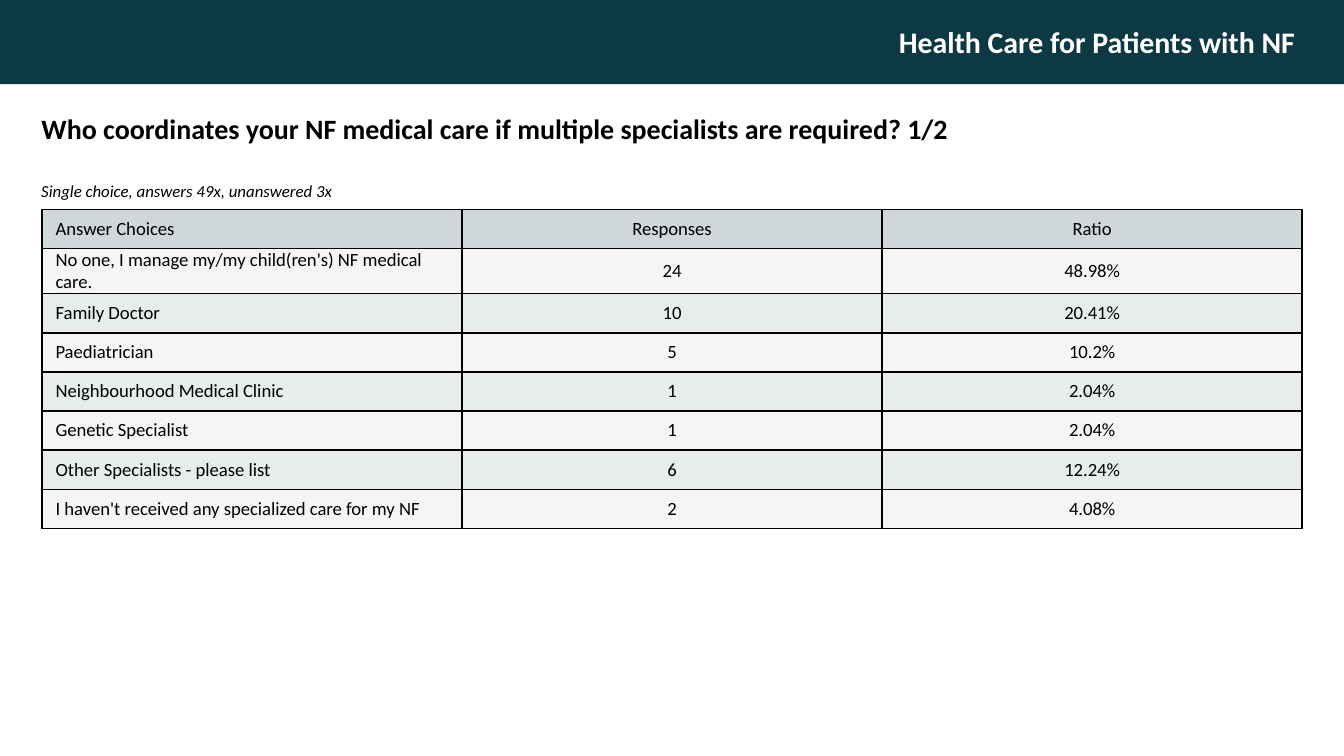
import pptx
import pptx.dml.color
import pptx.enum.shapes
import pptx.enum.text
import pptx.oxml
import pptx.oxml.ns
import pptx.util
from pptx.util import Cm

ANCHOR = pptx.enum.text.MSO_ANCHOR
ALIGN = pptx.enum.text.PP_ALIGN

ANSWERS = [
    ("Answer Choices", "Responses", "Ratio"),
    ("No one, I manage my/my child(ren's) NF medical care.", "24", "48.98%"),
    ("Family Doctor", "10", "20.41%"),
    ("Paediatrician", "5", "10.2%"),
    ("Neighbourhood Medical Clinic", "1", "2.04%"),
    ("Genetic Specialist", "1", "2.04%"),
    ("Other Specialists - please list", "6", "12.24%"),
    ("I haven't received any specialized care for my NF", "2", "4.08%"),
]
HEADER_FILL = "CFD7DA"
BAND_FILLS = ("E8ECED", "F5F5F5")


def rgb(hex_string):
    return pptx.dml.color.RGBColor.from_string(hex_string)


def set_attributes(target, values):
    for name, value in values.items():
        setattr(target, name, value)


def paint(target, hex_string):
    target.fill.solid()
    target.fill.fore_color.rgb = rgb(hex_string)


def write(frame, text, size, color="000000", align=ALIGN.LEFT, **font_values):
    paragraph = frame.paragraphs[0]
    paragraph.alignment = align
    run = paragraph.add_run()
    run.text = text
    set_attributes(run.font, {"name": "Calibri", "size": pptx.util.Pt(size), **font_values})
    run.font.color.rgb = rgb(color)
    return paragraph


def add_banner(slide, box):
    banner = slide.shapes.add_shape(pptx.enum.shapes.MSO_SHAPE.RECTANGLE, *box)
    banner.shadow.inherit = False
    paint(banner, "0D3944")
    banner.line.fill.background()
    set_attributes(banner.text_frame, {
        "word_wrap": True, "vertical_anchor": ANCHOR.MIDDLE, "margin_right": Cm(0.92)})
    write(banner.text_frame, "Health Care for Patients with NF", 16, "FFFFFF",
          ALIGN.RIGHT, bold=True)


def place_question(slide, box):
    question = slide.shapes.title
    set_attributes(question, dict(zip(("left", "top", "width", "height"), box)))
    set_attributes(question.text_frame, {
        "word_wrap": True, "vertical_anchor": ANCHOR.TOP,
        "auto_size": pptx.enum.text.MSO_AUTO_SIZE.NONE})
    write(question.text_frame,
          "Who coordinates your NF medical care if multiple specialists are required? 1/2",
          15, bold=True)


def add_answer_note(slide, box):
    note = slide.shapes.add_textbox(*box)
    note.text_frame.word_wrap = True
    write(note.text_frame, "Single choice, answers 49x, unanswered 3x", 9, italic=True)


def add_borders(cell):
    properties = cell._tc.get_or_add_tcPr()
    for position, side in enumerate(("lnL", "lnR", "lnT", "lnB")):
        properties.insert(position, pptx.oxml.parse_xml(
            f'<a:{side} {pptx.oxml.ns.nsdecls("a")} w="12700">'
            f'<a:solidFill><a:srgbClr val="000000"/></a:solidFill></a:{side}>'))


def add_answer_table(slide, box):
    left, top, width, height = box
    row_count, column_count = len(ANSWERS), len(ANSWERS[0])
    table = slide.shapes.add_table(row_count, column_count, *box).table
    for column in table.columns:
        column.width = width // column_count
    for row in table.rows:
        row.height = height // row_count

    for row_index, answer in enumerate(ANSWERS):
        fill = BAND_FILLS[row_index % 2] if row_index else HEADER_FILL
        for column_index, text in enumerate(answer):
            is_choice = column_index == 0
            cell = table.cell(row_index, column_index)
            set_attributes(cell, {
                "margin_left": Cm(0.13 if is_choice else 0), "margin_right": 0,
                "margin_top": 0, "margin_bottom": 0, "vertical_anchor": ANCHOR.MIDDLE})
            paint(cell, fill)
            add_borders(cell)
            paragraph = write(cell.text_frame, text, 10, bold=False,
                              align=ALIGN.LEFT if is_choice else ALIGN.CENTER)
            if is_choice:
                paragraph._p.get_or_add_pPr().set("marL", str(Cm(0.13)))


def main():
    deck = pptx.Presentation()
    set_attributes(deck, {"slide_width": Cm(25.4), "slide_height": Cm(14.29)})
    slide = deck.slides.add_slide(deck.slide_layouts[5])

    # Header
    add_banner(slide, (0, 0, deck.slide_width, Cm(1.59)))
    # Question and note
    place_question(slide, (Cm(0.53), Cm(1.98), Cm(24.34), Cm(1.32)))
    add_answer_note(slide, (Cm(0.53), Cm(3.3), Cm(10.6), Cm(1.58)))
    # Answers
    add_answer_table(slide, (Cm(0.79), Cm(3.96), Cm(23.82), Cm(5.92)))

    deck.save("out.pptx")


if __name__ == "__main__":
    main()
